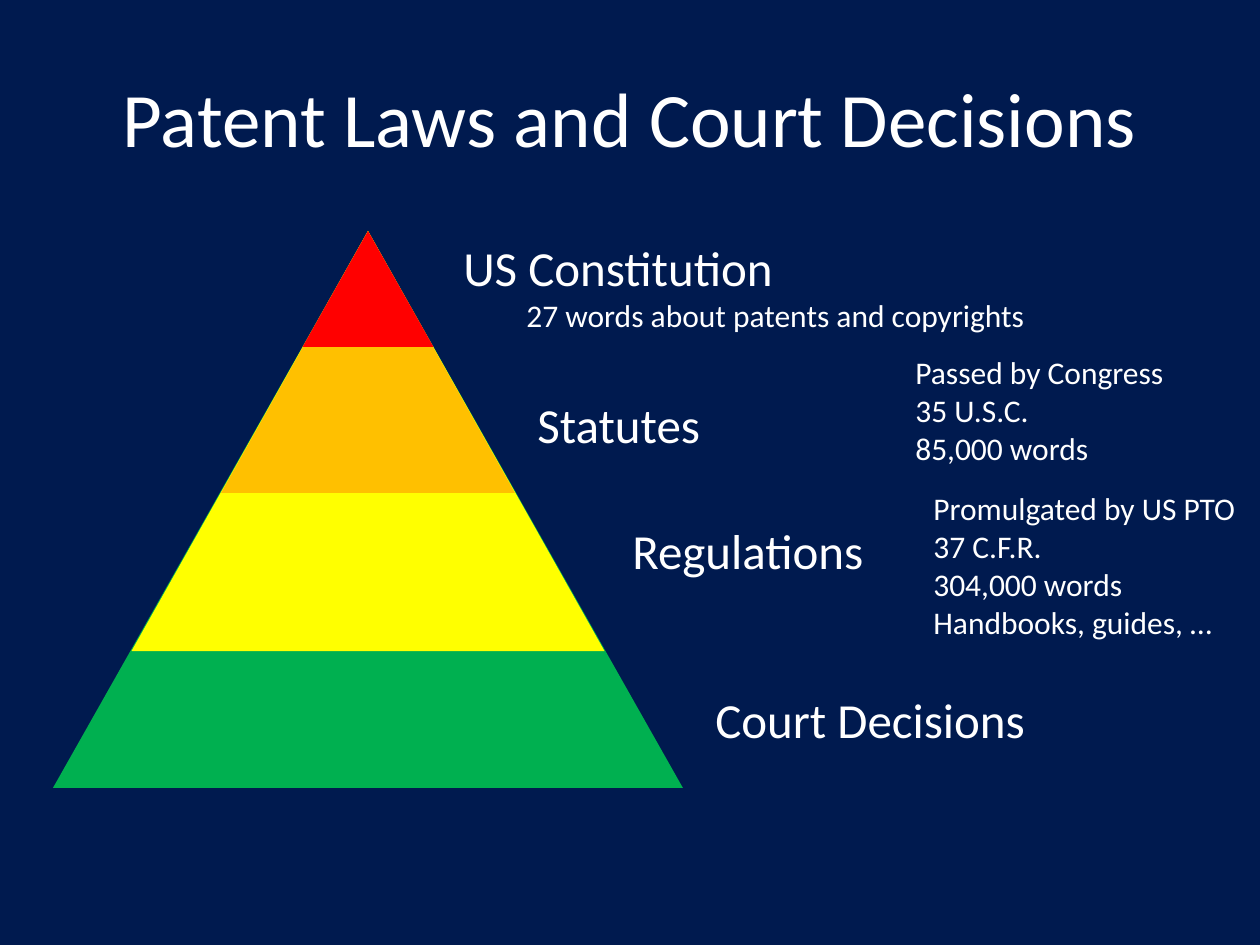
"""Build a slide with a four-tier pyramid of patent law sources."""
from pptx import Presentation
from pptx import util as u
from pptx.dml import color
from pptx.enum import shapes, text

SCALE = u.Inches(1) / 126


def px(*nums):
    return [round(n * SCALE) for n in nums]


def paint(fill, code):
    fill.solid()
    fill.fore_color.rgb = color.RGBColor.from_string(code)


deck = Presentation()
deck.slide_width, deck.slide_height = px(1260, 945)
slide = deck.slides.add_slide(deck.slide_layouts[6])
paint(slide.background.fill, "001A4F")

apex, top = 368, 231
tiers = [
    (630, 557, "00B050"),
    (473, 420, "FFFF00"),
    (294, 262, "FFC000"),
    (131, 116, "FF0000"),
]
for wide, high, code in tiers:
    tier = slide.shapes.add_shape(
        shapes.MSO_SHAPE.ISOSCELES_TRIANGLE, *px(apex - wide / 2, top, wide, high))
    tier.shadow.inherit = False
    tier.line.fill.background()
    paint(tier.fill, code)

title = {"alignment": text.PP_ALIGN.CENTER}
head = {"level": 0}
note = {"level": 1}
labels = [
    ((63, 38, 1134, 157), [("Patent Laws and Court Decisions", 44, title)]),
    ((620, 514, 305, 116), [("Regulations", 28, head)]),
    ((451, 231, 593, 149), [("US Constitution", 28, head),
                            ("27 words about patents and copyrights", 18, note)]),
    ((703, 683, 388, 131), [("Court Decisions", 28, head)]),
    ((525, 388, 190, 111), [("Statutes", 28, head)]),
    ((840, 347, 340, 165), [(line, 18, note) for line in (
        "Passed by Congress", "35 U.S.C.", "85,000 words")]),
    ((858, 483, 402, 204), [(line, 18, note) for line in (
        "Promulgated by US PTO", "37 C.F.R.", "304,000 words", "Handbooks, guides, …")]),
]
for place, lines in labels:
    frame = slide.shapes.add_textbox(*px(*place)).text_frame
    frame.word_wrap = True
    if lines[0][2] is title:
        frame.vertical_anchor = text.MSO_ANCHOR.MIDDLE
    for i, (words, size, form) in enumerate(lines):
        para = frame.add_paragraph() if i else frame.paragraphs[0]
        for key, val in form.items():
            setattr(para, key, val)
        run = para.add_run()
        run.text = words
        for key, val in {"name": "Calibri", "size": u.Pt(size)}.items():
            setattr(run.font, key, val)
        paint(run.font.fill, "FFFFFF")

deck.save("out.pptx")
